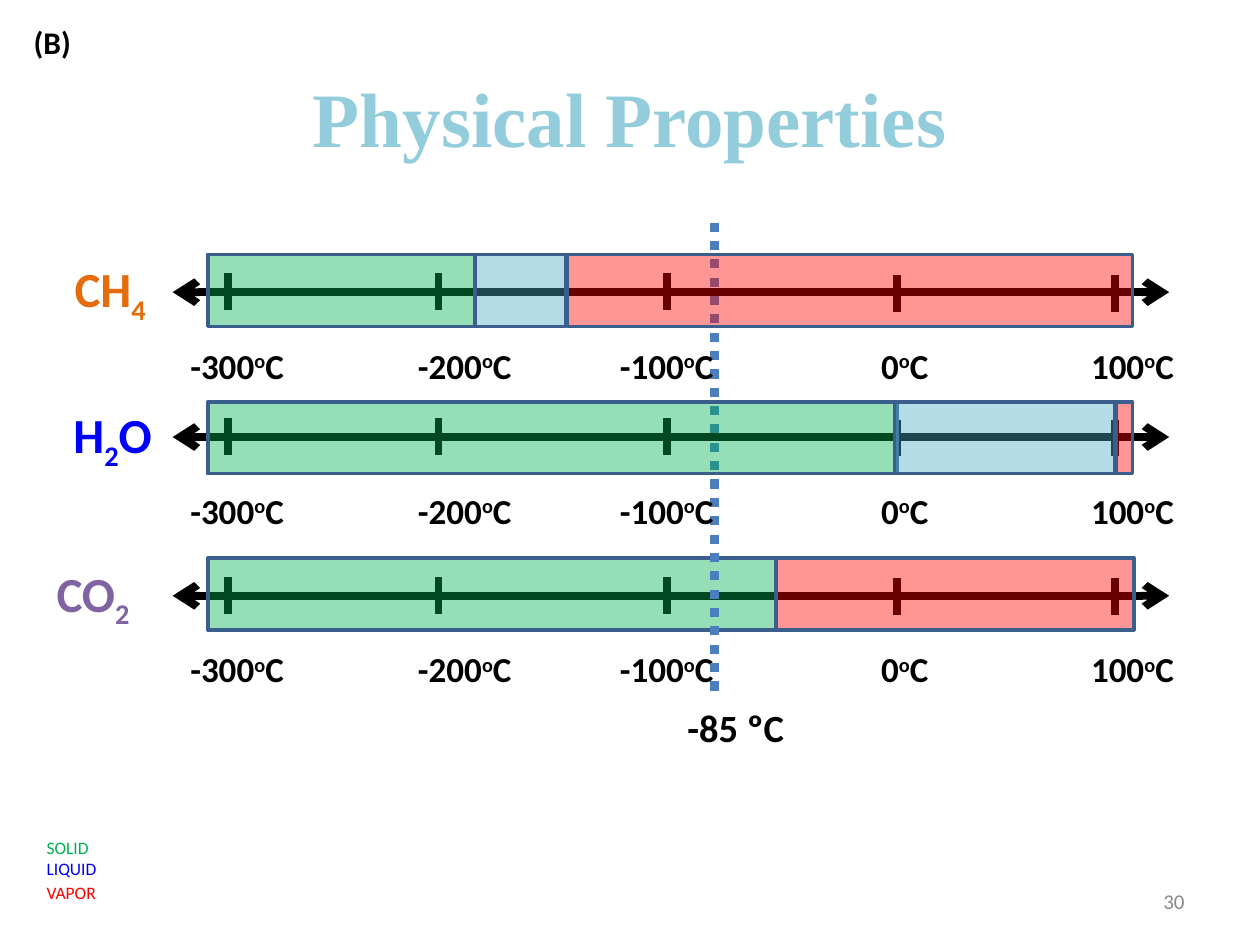
"""Build a slide comparing the phases of CH4, H2O and CO2 along a temperature scale."""
import lxml.etree
import pptx
import pptx.dml.color
import pptx.enum.dml
import pptx.enum.shapes
import pptx.enum.text
import pptx.oxml.ns
import pptx.util

Cm, Pt = pptx.util.Cm, pptx.util.Pt
RGBColor = pptx.dml.color.RGBColor
ALIGN = pptx.enum.text.PP_ALIGN
ANCHOR = pptx.enum.text.MSO_ANCHOR
qn = pptx.oxml.ns.qn

BLACK = RGBColor(0x00, 0x00, 0x00)
GREY = RGBColor(0x89, 0x89, 0x89)
TITLE = RGBColor(0x93, 0xCD, 0xDC)
OUTLINE = RGBColor(0x3A, 0x5F, 0x8C)
MARKER = RGBColor(0x4B, 0x7E, 0xBC)
SOLID = RGBColor(0x00, 0xB0, 0x50)
LIQUID = RGBColor(0x4B, 0xAC, 0xC6)
VAPOR = RGBColor(0xFF, 0x00, 0x00)
BLUE = RGBColor(0x00, 0x00, 0xFF)
ORANGE = RGBColor(0xE4, 0x6C, 0x0A)
PURPLE = RGBColor(0x80, 0x64, 0xA2)

SUPER, SUB = 30, -25
SCALE = [("-300", 4.6, 4.78, 0), ("-200", 8.84, 9.37, 0), ("-100", 13.44, 13.44, 0),
         ("0", 18.08, 18.24, 0.03), ("100", 22.48, 22.83, 0.03)]


class PhaseSlide:
    """Hold the style and the current slide, and draw each kind of element."""

    font = "Calibri"
    bar_height = 1.45
    alpha = 41

    def __init__(self, prs):
        self.s = prs.slides.add_slide(prs.slide_layouts[5])

    def style(self, r, size, color, bold=True, font=None):
        r.font.name = font or self.font
        r.font.size = Pt(size)
        r.font.bold = bold
        r.font.color.rgb = color

    def title(self, text, left, top, width, height):
        sp = self.s.shapes.title
        sp.left, sp.top, sp.width, sp.height = Cm(left), Cm(top), Cm(width), Cm(height)
        tf = sp.text_frame
        tf.text = text
        tf.vertical_anchor = ANCHOR.MIDDLE
        tf.paragraphs[0].alignment = ALIGN.CENTER
        self.style(tf.paragraphs[0].runs[0], 44, TITLE, font="Times New Roman")

    def box(self, left, top, width, height, anchor=ANCHOR.TOP, parent=None):
        sp = (parent or self.s).shapes.add_textbox(Cm(left), Cm(top), Cm(width), Cm(height))
        sp.text_frame.word_wrap = True
        sp.text_frame.vertical_anchor = anchor
        return sp.text_frame

    def text(self, rows, left, top, width, height, size, bold=True,
             align=ALIGN.LEFT, anchor=ANCHOR.TOP):
        tf = self.box(left, top, width, height, anchor)
        tf.text = "\n".join(text for text, _ in rows)
        for p, (_, color) in zip(tf.paragraphs, rows):
            p.alignment = align
            self.style(p.runs[0], size, color, bold)
        return tf

    def formula(self, parts, left, top, width, height, size, color,
                align=ALIGN.CENTER, parent=None):
        p = self.box(left, top, width, height, ANCHOR.MIDDLE, parent).paragraphs[0]
        p.alignment = align
        for text, baseline in parts:
            r = p.add_run()
            r.text = text
            self.style(r, size, color)
            if baseline:
                r._r.get_or_add_rPr().set("baseline", str(baseline * 1000))

    def line(self, x1, y1, x2, y2, color=BLACK, width=4.5, dash=None, arrows=False, parent=None):
        sp = (parent or self.s).shapes.add_connector(
            pptx.enum.shapes.MSO_CONNECTOR.STRAIGHT, Cm(x1), Cm(y1), Cm(x2), Cm(y2))
        sp.line.color.rgb = color
        sp.line.width = Pt(width)
        if dash:
            sp.line.dash_style = dash
        if arrows:
            for end in ("a:headEnd", "a:tailEnd"):
                lxml.etree.SubElement(sp.line._get_or_add_ln(), qn(end), type="arrow")
        lxml.etree.SubElement(sp._element.spPr, qn("a:effectLst"))

    def axis(self, y):
        group = self.s.shapes.add_group_shape()
        self.line(3.48, y, 23.57, y, arrows=True, parent=group)
        for degrees, x, center, shift in SCALE:
            self.line(x, y - 0.38 + shift, x, y + 0.36 + shift, parent=group)
            self.formula([(degrees, 0), ("o", SUPER), ("C", 0)],
                         center - 1.65, y + 0.79, 3.3, 1.37, 20, BLACK, parent=group)

    def bar(self, left, right, top, color):
        sp = self.s.shapes.add_shape(pptx.enum.shapes.MSO_SHAPE.RECTANGLE, Cm(left), Cm(top),
                                     Cm(right - left), Cm(self.bar_height))
        sp.shadow.inherit = False
        sp.fill.solid()
        sp.fill.fore_color.rgb = color
        clr = sp._element.spPr.find(qn("a:solidFill")).find(qn("a:srgbClr"))
        lxml.etree.SubElement(clr, qn("a:alpha"), val=str(self.alpha * 1000))
        sp.line.color.rgb = OUTLINE
        sp.line.width = Pt(2)


def main():
    prs = pptx.Presentation()
    prs.slide_width, prs.slide_height = Cm(25.4), Cm(19.05)
    slide = PhaseSlide(prs)
    slide.title("Physical Properties", 1.27, 0.76, 22.86, 3.18)

    slide.axis(12.01)
    slide.bar(4.19, 15.65, 11.25, SOLID)
    slide.bar(15.65, 22.86, 11.25, VAPOR)
    slide.formula([("CO", 0), ("2", SUB)], 0.89, 11.25, 2.69, 1.57, 28, PURPLE, ALIGN.LEFT)
    slide.line(14.4, 13.92, 14.4, 4.5, MARKER, 5.25, pptx.enum.dml.MSO_LINE.ROUND_DOT)

    slide.axis(5.89)
    slide.axis(8.81)
    slide.formula([("CH", 0), ("4", SUB)], 0.33, 5.11, 3.78, 1.57, 28, ORANGE)
    slide.formula([("H", 0), ("2", SUB), ("O", 0)], 0.38, 8.05, 3.78, 1.57, 28, BLUE)
    for left, right, top, color in [
            (4.19, 9.58, 5.13, SOLID), (4.19, 18.08, 8.1, SOLID),
            (9.58, 11.4, 5.13, LIQUID), (18.03, 22.5, 8.1, LIQUID),
            (11.43, 22.83, 5.13, VAPOR), (22.48, 22.83, 8.1, VAPOR)]:
        slide.bar(left, right, top, color)

    slide.text([("-85 ºC", BLACK)], 13.61, 14.07, 2.97, 1.19, 22)
    tf = slide.text([("SOLID", SOLID), ("LIQUID", BLUE), ("VAPOR", VAPOR)],
                    0.69, 16.74, 2.97, 1.63, 10, bold=False)
    tf.paragraphs[2].space_before = Pt(2)
    slide.text([("30", GREY)], 18.21, 17.65, 5.92, 1.02, 12, False, ALIGN.RIGHT, ANCHOR.MIDDLE)
    slide.text([("(B)", BLACK)], 0.43, 0.33, 1.47, 1.02, 18)
    prs.save("out.pptx")


if __name__ == "__main__":
    main()
